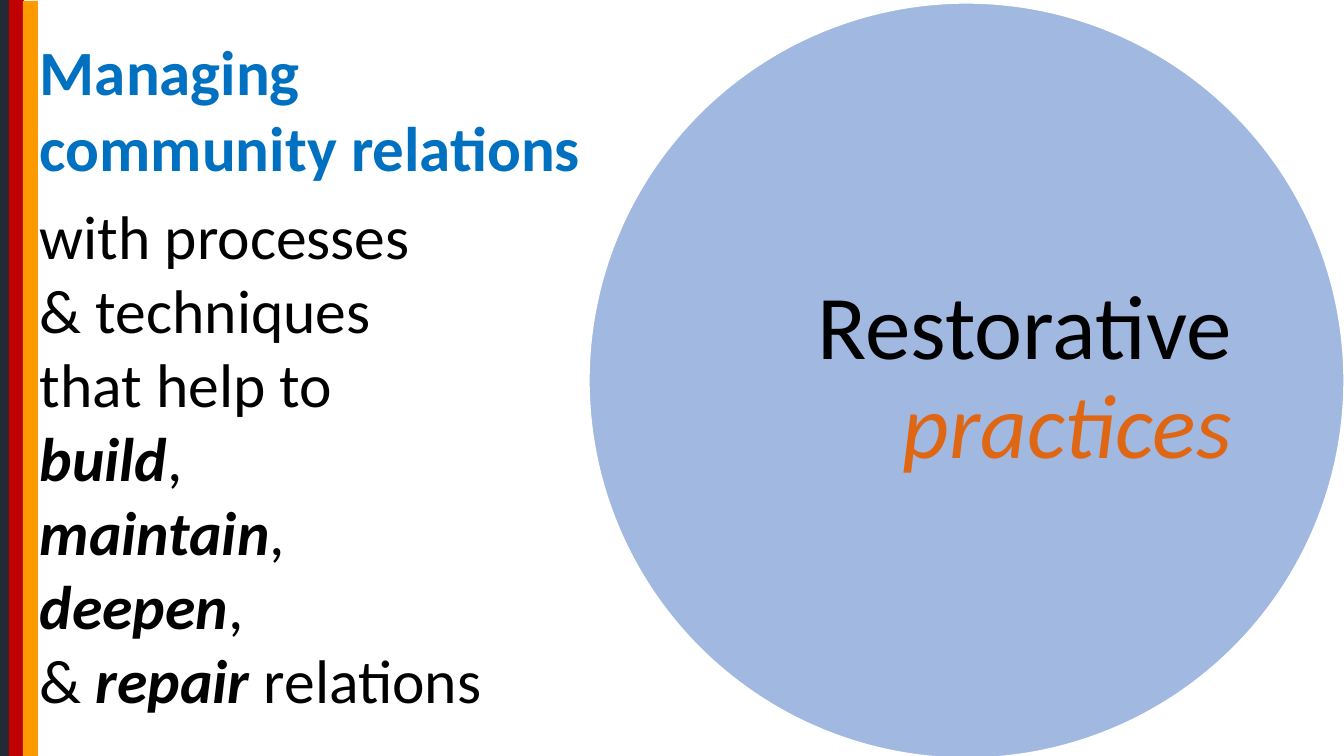
from lxml.etree import SubElement
from pptx import Presentation
from pptx.dml.color import RGBColor
from pptx.enum.shapes import MSO_SHAPE
from pptx.enum.text import MSO_ANCHOR, MSO_AUTO_SIZE, PP_ALIGN
from pptx.oxml.ns import qn
from pptx.util import Pt

SCALE = 914400 / 100.8
COLORS = {"navy": "222A35", "red": "C00000", "amber": "FF9900", "disc": "4472C4",
          "white": "FFFFFF", "black": "000000", "blue": "0070C0", "orange": "DF6613"}
HEAD = {"size": Pt(45), "bold": True, "color": "blue"}
BODY = {"size": Pt(44), "bold": False, "color": "black"}
STRONG = {**BODY, "bold": True, "italic": True}
TITLE = {"size": Pt(65), "bold": False, "color": "black"}


def px(*lengths):
    return [round(n * SCALE) for n in lengths]


def tint(name):
    return RGBColor.from_string(COLORS[name])


def assign(target, values):
    for key, value in values.items():
        setattr(target, key, value)


class Board:
    font = "Calibri"

    def __init__(self, slide):
        self.slide = slide

    def shape(self, kind, box, fill, line=None, alpha=None):
        """Add a filled shape; alpha is its opacity in percent."""
        item = self.slide.shapes.add_shape(kind, *px(*box))
        item.shadow.inherit = False
        item.fill.solid()
        item.fill.fore_color.rgb = tint(fill)
        if alpha:
            color = item.fill._xPr.find(qn("a:solidFill"))[0]
            SubElement(color, qn("a:alpha"), val=str(alpha * 1000))
        if line:
            item.line.color.rgb = tint(line)
            item.line.width = Pt(1)
        else:
            item.line.fill.background()

    def add_runs(self, para, runs):
        for text, style in runs:
            run = para.add_run()
            run.text = text
            values = dict(style)
            run.font.color.rgb = tint(values.pop("color"))
            assign(run.font, {"name": self.font, **values})

    def title(self, box, runs):
        item = self.slide.shapes.title
        assign(item, dict(zip(("left", "top", "width", "height"), px(*box))))
        # The heading sits in front of the disc.
        self.slide.shapes._spTree.append(item._element)
        frame = item.text_frame
        assign(frame, {"word_wrap": True, "auto_size": MSO_AUTO_SIZE.NONE,
                       "vertical_anchor": MSO_ANCHOR.MIDDLE, "margin_left": 0,
                       "margin_top": 0, "margin_right": 0, "margin_bottom": 0})
        para = frame.paragraphs[0]
        assign(para, {"alignment": PP_ALIGN.RIGHT, "line_spacing": 0.9})
        self.add_runs(para, runs)

    def text(self, box, lines, gaps):
        """Add one paragraph per line; gaps maps a line number to space before it."""
        frame = self.slide.shapes.add_textbox(*px(*box)).text_frame
        assign(frame, {"word_wrap": True, "auto_size": MSO_AUTO_SIZE.SHAPE_TO_FIT_TEXT})
        for n, runs in enumerate(lines):
            para = frame.add_paragraph() if n else frame.paragraphs[0]
            if n in gaps:
                para.space_before = Pt(gaps[n])
            self.add_runs(para, runs)


def main():
    deck = Presentation()
    deck.slide_width, deck.slide_height = px(1344, 756)
    board = Board(deck.slides.add_slide(deck.slide_layouts[5]))

    bars = [(0, 0, 10, "navy"), (9, 0, 15, "red"), (23, 1, 15, "amber")]
    for left, top, width, fill in bars:
        board.shape(MSO_SHAPE.RECTANGLE, (left, top, width, 756 - top), fill)
    board.shape(MSO_SHAPE.OVAL, (589, 3, 755, 755), "disc", "white", 50)
    board.title((699, 113, 533, 533),
                [("Restorative ", TITLE),
                 ("practices", {**TITLE, "italic": True, "color": "orange"})])

    lines = [[(text, HEAD)] for text in ("Managing", "community relations")]
    lines += [[(text, BODY)] for text in ("with processes", "& techniques", "that help to")]
    lines += [[(verb, STRONG), (",", BODY)] for verb in ("build", "maintain", "deepen")]
    lines.append([("& ", BODY), ("repair", STRONG), (" relations", BODY)])
    board.text((30, 28, 589, 699), lines, {2: 10})

    deck.save("out.pptx")


if __name__ == "__main__":
    main()
